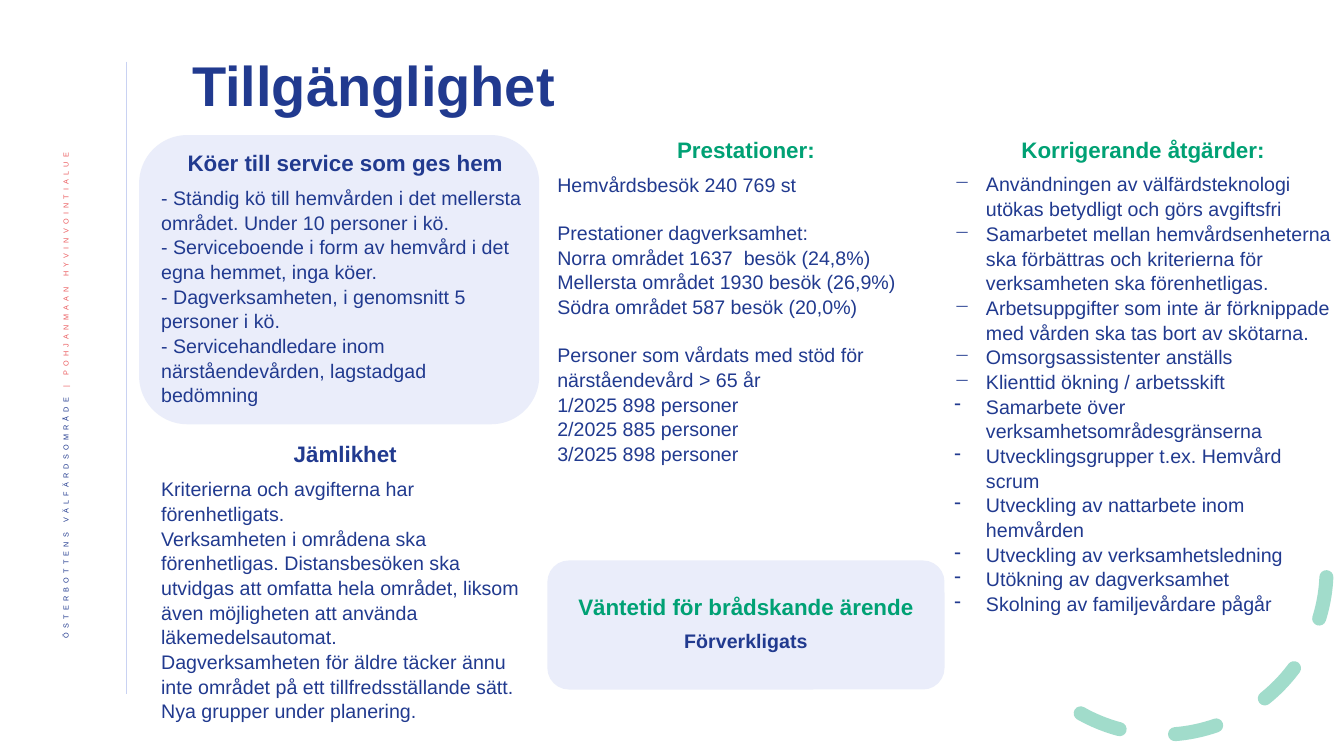
from pptx import Presentation
from pptx.dml.color import RGBColor
from pptx.enum.dml import MSO_LINE_DASH_STYLE as Dash
from pptx.enum.shapes import MSO_CONNECTOR as Connector, MSO_SHAPE as Shape
from pptx.enum.text import MSO_ANCHOR as Anchor, PP_ALIGN as Align
from pptx.oxml.ns import qn
from pptx.util import Pt
from lxml.etree import SubElement

COLORS = {"navy": "213A8F", "green": "00A174", "coral": "EB5C5F", "lavender": "C9D2F2"}


class SlideBuilder:
    font_name = "Arial"
    heading_size = 16
    body_size = 14
    heading_gap = 6
    body_spacing = 1.05
    blank_line = 16.9
    bullet_indent = 22.5

    def __init__(self, presentation):
        self.slide = presentation.slides.add_slide(presentation.slide_layouts[6])

    def color(self, name):
        return RGBColor.from_string(COLORS[name])

    def set_opacity(self, fill, percent):
        color = fill.find(".//" + qn("a:srgbClr"))
        SubElement(color, qn("a:alpha"), val=str(percent * 1000))

    def format_run(self, run, size, color, bold=False):
        run.font.name = self.font_name
        run.font.size = Pt(size)
        run.font.bold = bold
        run.font.color.rgb = self.color(color)

    def text_frame(self, left, top, width, height, anchor=Anchor.TOP):
        box = self.slide.shapes.add_textbox(Pt(left), Pt(top), Pt(width), Pt(height))
        box.text_frame.word_wrap = True
        box.text_frame.vertical_anchor = anchor
        return box.text_frame

    def title(self, text, *box):
        frame = self.text_frame(*box, anchor=Anchor.MIDDLE)
        frame.text = text
        frame.paragraphs[0].line_spacing = 0.9
        self.format_run(frame.paragraphs[0].runs[0], 40, "navy", True)

    def side_label(self, parts, *box):
        frame = self.text_frame(*box, anchor=Anchor.MIDDLE)
        frame._txBody.bodyPr.set("vert", "vert270")
        paragraph = frame.paragraphs[0]
        paragraph.alignment = Align.RIGHT
        paragraph.line_spacing = 0.9
        for text, color in parts:
            run = paragraph.add_run()
            run.text = text
            self.format_run(run, 9, color)
            properties = run._r.get_or_add_rPr()
            properties.set("baseline", "30000")
            properties.set("spc", "300")

    def rule(self, x, top, bottom):
        line = self.slide.shapes.add_connector(Connector.STRAIGHT, Pt(x), Pt(top), Pt(x), Pt(bottom))
        line.line.color.rgb = self.color("lavender")
        line.line.width = Pt(0.5)
        SubElement(line._element.spPr, qn("a:effectLst"))

    def dashed_arc(self, left, top, size):
        arc = self.slide.shapes.add_shape(Shape.ARC, Pt(left), Pt(top), Pt(size), Pt(size))
        arc.shadow.inherit = False
        arc.rotation = 98.9
        arc.adjustments[0] = 158.17
        arc.adjustments[1] = 17.81
        arc.fill.background()
        arc.line.color.rgb = self.color("green")
        arc.line.width = Pt(10)
        arc.line.dash_style = Dash.DASH
        outline = arc._element.spPr.find(qn("a:ln"))
        outline.set("cap", "rnd")
        self.set_opacity(outline, 36)

    def card(self, left, top, width, height):
        card = self.slide.shapes.add_shape(
            Shape.ROUNDED_RECTANGLE, Pt(left), Pt(top), Pt(width), Pt(height))
        card.shadow.inherit = False
        card.fill.solid()
        card.fill.fore_color.rgb = self.color("lavender")
        card.line.fill.background()
        self.set_opacity(card._element.spPr.find(qn("a:solidFill")), 38)

    def add_bullet(self, paragraph, character):
        properties = paragraph._p.get_or_add_pPr()
        properties.set("marL", str(Pt(self.bullet_indent)))
        properties.set("indent", str(Pt(-self.bullet_indent)))
        SubElement(properties, qn("a:buChar"), char=character)

    def section(self, heading, lines, box, color="green", heading_spacing=1.0,
                bullets="", gaps_before=(), centered_bold=False):
        frame = self.text_frame(*box)
        frame.text = heading
        paragraph = frame.paragraphs[0]
        paragraph.alignment = Align.CENTER
        paragraph.line_spacing = heading_spacing
        paragraph.space_after = Pt(self.heading_gap)
        self.format_run(paragraph.runs[0], self.heading_size, color, True)
        for index, line in enumerate(lines):
            paragraph = frame.add_paragraph()
            paragraph.text = line
            if bullets:
                self.add_bullet(paragraph, bullets[index])
            paragraph.line_spacing = self.body_spacing
            if index in gaps_before:
                paragraph.space_before = Pt(self.blank_line)
            if centered_bold:
                paragraph.alignment = Align.CENTER
            self.format_run(paragraph.runs[0], self.body_size, "navy", centered_bold)


QUEUES = [
    "- Ständig kö till hemvården i det mellersta området. Under 10 personer i kö.",
    "- Serviceboende i form av hemvård i det egna hemmet, inga köer.",
    "- Dagverksamheten, i genomsnitt 5 personer i kö.",
    "- Servicehandledare inom närståendevården, lagstadgad bedömning",
]
EQUALITY = [
    "Kriterierna och avgifterna har förenhetligats.",
    "Verksamheten i områdena ska förenhetligas. Distansbesöken ska utvidgas att omfatta "
    "hela området, liksom även möjligheten att använda läkemedelsautomat.",
    "Dagverksamheten för äldre täcker ännu inte området på ett tillfredsställande sätt. "
    "Nya grupper under planering.",
]
PERFORMANCE = [
    "Hemvårdsbesök 240 769 st",
    "Prestationer dagverksamhet:",
    "Norra området 1637  besök (24,8%)",
    "Mellersta området 1930 besök (26,9%)",
    "Södra området 587 besök (20,0%)",
    "Personer som vårdats med stöd för närståendevård > 65 år",
    "1/2025 898 personer",
    "2/2025 885 personer",
    "3/2025 898 personer",
]
ACTIONS = [
    "Användningen av välfärdsteknologi utökas betydligt och görs avgiftsfri",
    "Samarbetet mellan hemvårdsenheterna ska förbättras och kriterierna för verksamheten "
    "ska förenhetligas.",
    "Arbetsuppgifter som inte är förknippade med vården ska tas bort av skötarna.",
    "Omsorgsassistenter anställs",
    "Klienttid ökning / arbetsskift",
    "Samarbete över verksamhetsområdesgränserna",
    "Utvecklingsgrupper t.ex. Hemvård scrum",
    "Utveckling av nattarbete inom hemvården",
    "Utveckling av verksamhetsledning",
    "Utökning av dagverksamhet",
    "Skolning av familjevårdare pågår",
]


def main():
    presentation = Presentation()
    presentation.slide_width = Pt(960)
    presentation.slide_height = Pt(540)
    builder = SlideBuilder(presentation)

    builder.rule(90, 44, 495.4)
    builder.side_label([("ÖSTERBOTTENS VÄLFÄRDSOMRÅDE ", "navy"),
                        ("| POHJANMAAN HYVINVOINTIALUE", "coral")], 30.2, 102.2, 37.4, 412.6)
    builder.dashed_arc(712.1, 289.4, 235.4)
    builder.title("Tillgänglighet", 130.3, 32.4, 734.4, 61.2)

    builder.card(99.4, 96.5, 285.8, 206.6)
    builder.section("Köer till service som ges hem", QUEUES, (108, 105.1, 277.2, 166.3),
                    color="navy", heading_spacing=0.9)
    builder.section("Prestationer:", PERFORMANCE, (391, 93.6, 283.7, 236.2), gaps_before=(1, 5))
    builder.section("Korrigerande åtgärder:", ACTIONS, (674.7, 93.6, 283.7, 398.9),
                    bullets="−" * 5 + "-" * 6)
    builder.card(391, 400.3, 283.7, 92.2)
    builder.section("Jämlikhet", EQUALITY, (108, 313.2, 277.2, 200.2),
                    color="navy", heading_spacing=0.9)
    builder.section("Väntetid för brådskande ärende", ["Förverkligats"],
                    (391, 419.8, 283.7, 49.7), centered_bold=True)

    presentation.save("out.pptx")


if __name__ == "__main__":
    main()
